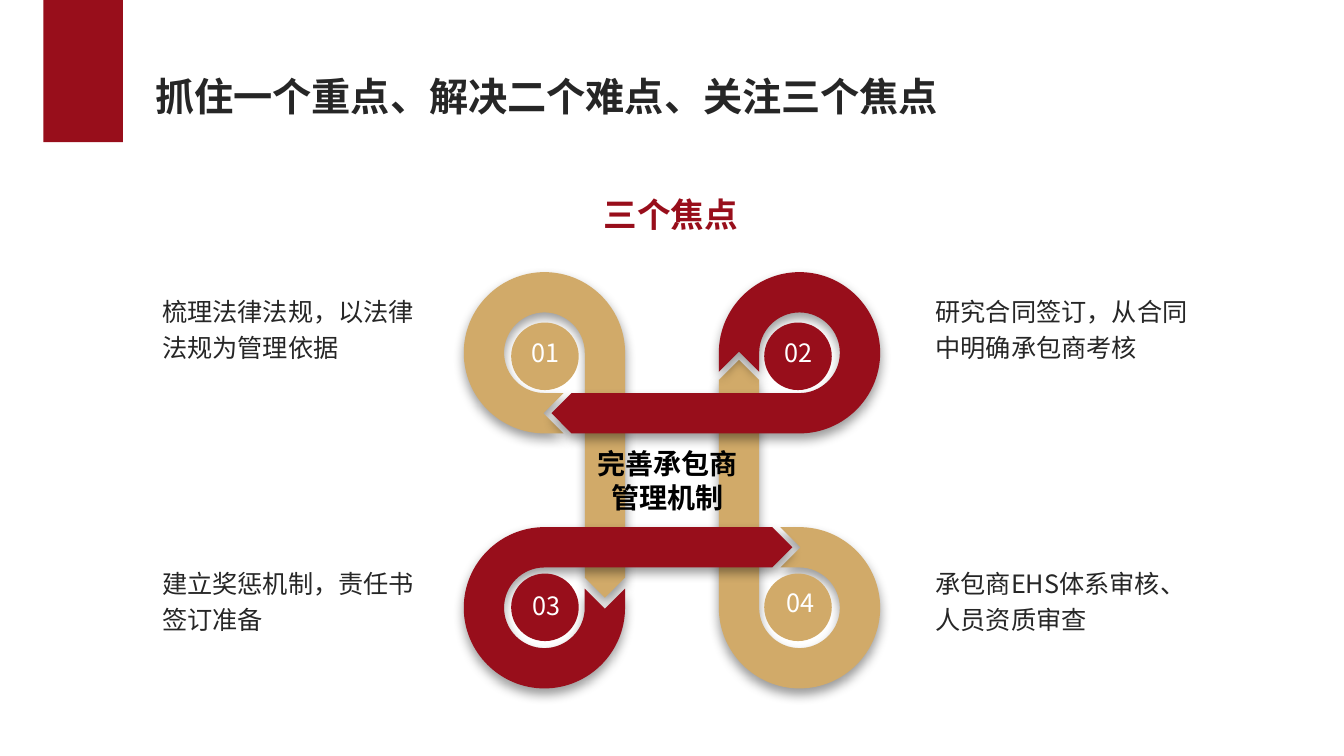
from math import cos, radians, sin

from lxml.etree import SubElement
from pptx import Presentation
from pptx.dml.color import RGBColor
from pptx.enum.shapes import MSO_SHAPE as Shape
from pptx.enum.text import MSO_AUTO_SIZE as Fit, PP_ALIGN as Align
from pptx.oxml.ns import qn
from pptx.util import Inches, Pt

FONT = "Noto Sans CJK SC"
RED, GOLD, DARK, WHITE, BLACK = "980E1B", "D1AA69", "262626", "FFFFFF", "000000"

HEAD = {"size": Pt(28), "bold": True}
SUB = {"size": Pt(24), "bold": True}
CORE = {"size": Pt(20), "bold": True}
BODY = {"size": Pt(18)}

# words, box, format, colour, alignment, line spacing, wrap
TITLES = [
    ("抓住一个重点、解决二个难点、关注三个焦点", (1.44, 0.67, 8.06, 0.57),
     HEAD, DARK, Align.LEFT, 1, False),
    ("三个焦点", (5.52, 1.87, 2.27, 0.5), SUB, RED, Align.CENTER, 1, True),
    ("完善承包商管理机制", (5.8, 4.38, 1.64, 0.77), CORE, BLACK, Align.CENTER, 1, True),
]

# number, words, column, row, colour, quarter turns, tail length, number place
HOOKS = [
    ("04", "承包商EHS体系审核、人员资质审查", 1, 1, GOLD, 0, 2.46, (7.55, 5.78)),
    ("01", "梳理法律法规，以法律法规为管理依据", 0, 0, GOLD, 2, 2.43, (5.02, 3.3)),
    ("02", "研究合同签订，从合同中明确承包商考核", 1, 0, RED, 3, 2.46, (7.53, 3.3)),
    ("03", "建立奖惩机制，责任书签订准备", 0, 1, RED, 1, 2.46, (5.03, 5.81)),
]
RING_X, RING_Y = (5.4, 7.93), (3.5, 6.03)
DISC_X, DISC_Y, DISC = (5.07, 7.58), (3.2, 5.69), 0.67
NOTE_X, NOTE_Y = (1.51, 9.18), (2.83, 5.53)
OUTER, INNER, TIP = 0.8, 0.4, 0.2
BEND = 0.55  # handle length of a quarter circle, as a share of its radius

deck = Presentation()
deck.slide_width, deck.slide_height = Inches(13.33), Inches(7.5)
slide = deck.slides.add_slide(deck.slide_layouts[6])
shapes = slide.shapes


def rgb(code):
    return RGBColor.from_string(code)


def paint(shape, color):
    shape.fill.solid()
    shape.fill.fore_color.rgb = rgb(color)
    shape.line.fill.background()
    shape.shadow.inherit = False


def block(kind, box, color):
    paint(shapes.add_shape(kind, *map(Inches, box)), color)


def write(words, box, look, color, align=Align.LEFT, gap=1, wrap=True):
    frame = shapes.add_textbox(*map(Inches, box)).text_frame
    frame.word_wrap, frame.auto_size = wrap, Fit.SHAPE_TO_FIT_TEXT
    para = frame.paragraphs[0]
    para.alignment, para.line_spacing = align, gap
    run = para.add_run()
    run.text = words
    for key, value in look.items():
        setattr(run.font, key, value)
    run.font.name = FONT
    run.font.color.rgb = rgb(color)
    SubElement(run.font._element, qn("a:ea"), typeface=FONT)


def arc(radius, start, way):
    """Three quarter circles from a start angle; way is 1 for clockwise."""
    steps = []
    for n in range(3):
        a = radians(start + way * 90 * n)
        x, y = radius * cos(a), radius * sin(a)
        u, v = -way * y, way * x
        steps.append([(x + BEND * u, y + BEND * v), (u + BEND * x, v + BEND * y), (u, v)])
    return steps


def outline(reach):
    """Steps of a ring with a notch at its top and a pointed tail going up."""
    mid = (OUTER + INNER) / 2
    notch = [(-0.19, -OUTER), (0.01, -mid), (-0.19, -INNER), (0, -INNER)]
    tail = [(-INNER, TIP - reach), (-mid, -reach), (-OUTER, TIP - reach), (-OUTER, 0)]
    return ([[p] for p in notch] + arc(INNER, 270, 1)
            + [[p] for p in tail] + arc(OUTER, 180, -1))


def curve(shape, steps):
    """Join each step of three points into one curve."""
    lines = iter(list(shape._element.iter(qn("a:lnTo"))))
    for step in steps[1:]:
        first, *rest = [next(lines) for _ in step]
        if rest:
            first.tag = qn("a:cubicBezTo")
        for line in rest:
            first.append(line[0])
            line.getparent().remove(line)


def cast(shape):
    """Add a soft shadow below the shape."""
    effects = shape._element.spPr.find(qn("a:effectLst"))
    shade = SubElement(effects, qn("a:outerShdw"), blurRad=str(Pt(8)),
                       dist=str(Pt(4)), dir="5400000", algn="t", rotWithShape="0")
    tint = SubElement(shade, qn("a:srgbClr"), val=BLACK)
    SubElement(tint, qn("a:alpha"), val="40000")


def hook(x, y, color, turns, reach):
    steps = outline(reach)
    points = [p for step in steps for p in step]
    for _ in range(turns):
        points = [(-b, a) for a, b in points]
    points = [(Inches(x + a), Inches(y + b)) for a, b in points]
    pen = shapes.build_freeform(*points[0])
    pen.add_line_segments(points[1:], close=True)
    shape = pen.convert_to_shape()
    curve(shape, steps)
    paint(shape, color)
    cast(shape)


block(Shape.RECTANGLE, (0.43, 0, 0.79, 1.41), RED)
for _, _, col, row, color, turns, reach, _ in HOOKS:
    hook(RING_X[col], RING_Y[row], color, turns, reach)
for number, note, col, row, color, _, _, place in HOOKS:
    block(Shape.OVAL, (DISC_X[col], DISC_Y[row], DISC, DISC), color)
    write(number, (*place, 0.78, 0.57), BODY, WHITE, Align.CENTER)
    write(note, (NOTE_X[col], NOTE_Y[row], 2.87, 0.8), BODY, DARK, gap=1.2)
for title in TITLES:
    write(*title)

deck.save("out.pptx")
